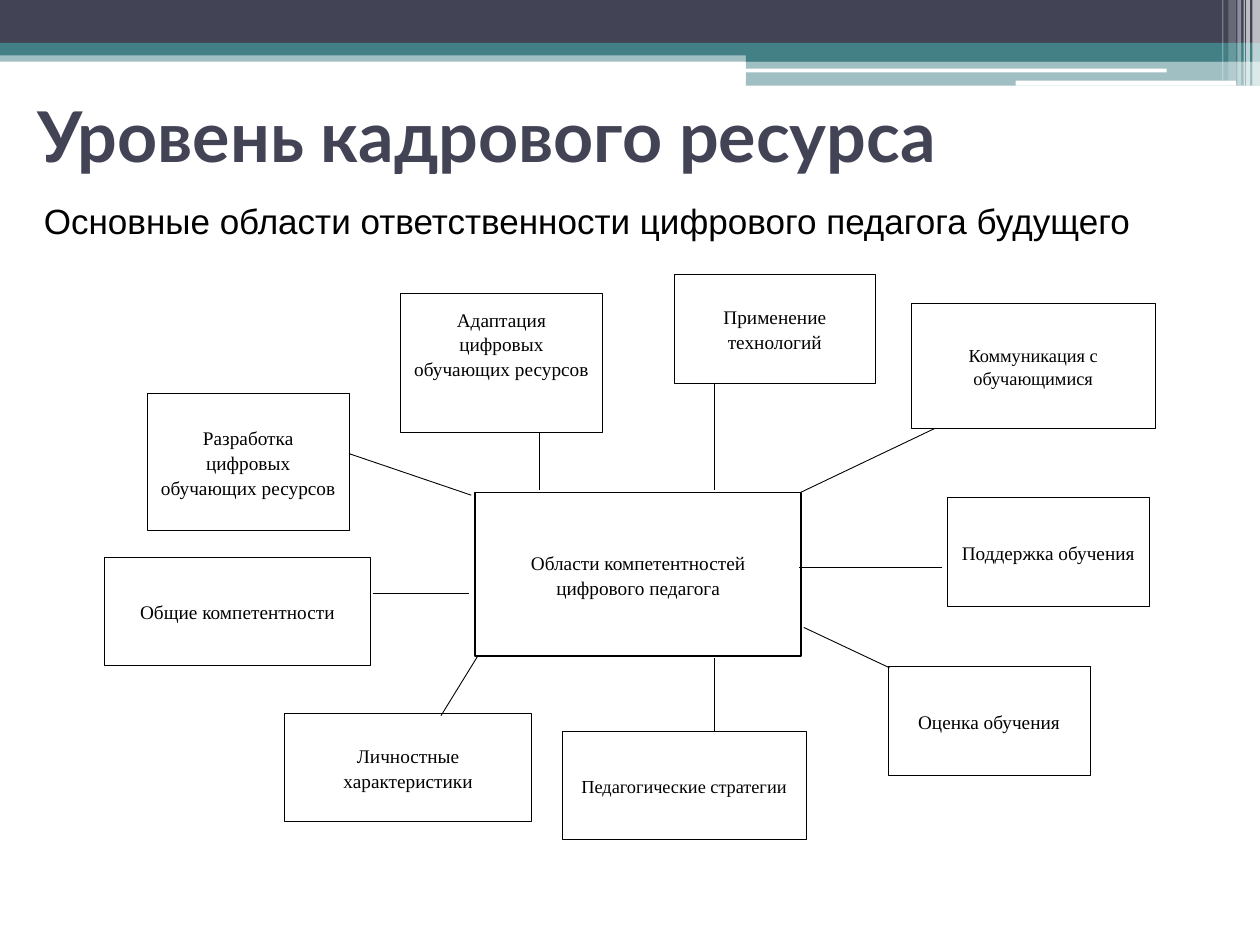
from dataclasses import dataclass

from lxml import etree
from pptx import Presentation
from pptx.dml.color import RGBColor
from pptx.enum.shapes import MSO_CONNECTOR, MSO_SHAPE
from pptx.enum.text import MSO_ANCHOR, MSO_AUTO_SIZE, PP_ALIGN
from pptx.oxml.ns import qn
from pptx.util import Inches, Pt

RECT, ROUNDED = MSO_SHAPE.RECTANGLE, MSO_SHAPE.ROUNDED_RECTANGLE
STRAIGHT = MSO_CONNECTOR.STRAIGHT
LEFT, CENTER = PP_ALIGN.LEFT, PP_ALIGN.CENTER
TOP, MIDDLE = MSO_ANCHOR.TOP, MSO_ANCHOR.MIDDLE
TITLE_ONLY = 5
COLUMNS, ROWS = 100, 75  # square cells on a 10 x 7.5 inch slide
SLIDE_WIDTH, SLIDE_HEIGHT = Inches(10), Inches(7.5)


@dataclass(frozen=True)
class Theme:
    dark: str = "424456"
    teal: str = "438086"
    white: str = "FFFFFF"
    ink: str = "000000"
    title_font: str = "Lato"
    body_font: str = "Arial"
    box_font: str = "Times New Roman"
    title_size: float = 40
    body_size: float = 20
    box_size: float = 11
    small_box_size: float = 10.5
    hub_line: float = 1
    box_line: float = 0.25
    link_line: float = 0.5


THEME = Theme()

# Header bands: shape, (column, row, columns, rows), colour, opacity in percent
HEADER_BANDS = [
    (RECT, (0, 4, 100, 0.9), THEME.teal, 50),
    (RECT, (0, 0, 100, 3.4), THEME.dark, 100),
    (RECT, (0, 3.4, 100, 1), THEME.teal, 100),
    (RECT, (59.2, 3.9, 40.8, 1), THEME.teal, 100),
    (RECT, (59.2, 4.85, 40.8, 1.95), THEME.teal, 50),
    (ROUNDED, (59.1, 5.45, 33.5, 0.3), THEME.white, 100),
    (ROUNDED, (80.6, 6.4, 17.5, 0.4), THEME.white, 100),
]

# White stripes at the right edge: column, width, height, opacity
HEADER_STRIPES = [
    (99.4, 0.6, 6.8, 65), (98.9, 0.3, 6.8, 65), (98.7, 0.1, 6.8, 60),
    (98.2, 0.3, 6.8, 40), (97.5, 0.6, 6.4, 20), (97, 0.1, 6.4, 30),
]

HUB = ("Области компетентностей цифрового педагога", (37.7, 39.1, 25.9, 13))

# Areas clockwise from the top left: text, place, type size, space kept below text
AREAS = [
    ("Адаптация цифровых обучающих ресурсов", (31.8, 23.3, 16, 11), THEME.box_size, 3.6),
    ("Применение технологий", (53.5, 21.8, 16, 8.6), THEME.box_size, 0.5),
    ("Коммуникация с обучающимися", (72.3, 24.1, 19.4, 9.9), THEME.small_box_size, 0.5),
    ("Поддержка обучения", (75.2, 39.5, 16, 8.6), THEME.box_size, 0.5),
    ("Оценка обучения", (70.5, 52.9, 16, 8.6), THEME.box_size, 0.5),
    ("Педагогические стратегии", (44.6, 58, 19.4, 8.6), THEME.small_box_size, 0.5),
    ("Личностные характеристики", (22.6, 56.6, 19.6, 8.6), THEME.box_size, 0.5),
    ("Общие компетентности", (8.3, 44.2, 21.1, 8.6), THEME.box_size, 0.5),
    ("Разработка цифровых обучающих ресурсов", (11.7, 31.2, 16, 10.9), THEME.box_size, 0.5),
]

# Links in the same order: area end, hub end
LINKS = [
    ((42.8, 34.3), (42.8, 38.9)),
    ((56.7, 30.4), (56.7, 38.9)),
    ((74.2, 34), (63.5, 39.1)),
    ((74.8, 45), (63.4, 45)),
    ((70.6, 53), (63.8, 49.8)),
    ((56.7, 58), (56.7, 52.2)),
    ((35, 56.8), (37.9, 52.1)),
    ((29.6, 47.1), (37.2, 47.1)),
    ((27.7, 36), (37.4, 39.3)),
]


def across(columns):
    return round(SLIDE_WIDTH * columns / COLUMNS)


def down(rows):
    return round(SLIDE_HEIGHT * rows / ROWS)


def place(cells):
    column, row, width, height = cells
    return across(column), down(row), across(width), down(height)


def write_text(frame, text, font, size, color, align, anchor, bold=False):
    frame.text = text
    frame.word_wrap = True
    frame.auto_size = MSO_AUTO_SIZE.NONE
    frame.vertical_anchor = anchor
    paragraph = frame.paragraphs[0]
    paragraph.alignment = align
    run_font = paragraph.runs[0].font
    run_font.name, run_font.size, run_font.bold = font, Pt(size), bold
    run_font.color.rgb = RGBColor.from_string(color)
    return paragraph


def add_band(slide, shape, cells, color, opacity):
    band = slide.shapes.add_shape(shape, *place(cells))
    band.shadow.inherit = False
    band.fill.solid()
    band.fill.fore_color.rgb = RGBColor.from_string(color)
    band.line.fill.background()
    if opacity < 100:
        fill_color = band.fill._xPr.find(qn("a:solidFill"))[0]
        etree.SubElement(fill_color, qn("a:alpha"), val=str(opacity * 1000))


def add_header(slide):
    for shape, cells, color, opacity in HEADER_BANDS:
        add_band(slide, shape, cells, color, opacity)
    for column, width, height, opacity in HEADER_STRIPES:
        add_band(slide, RECT, (column, 0, width, height), THEME.white, opacity)


def add_headings(slide):
    title = slide.shapes.title
    title.left, title.top, title.width, title.height = place((2, 6, 95.8, 9.4))
    write_text(title.text_frame, "Уровень кадрового ресурса", THEME.title_font,
               THEME.title_size, THEME.dark, LEFT, MIDDLE, bold=True)
    subtitle = slide.shapes.add_textbox(*place((2.5, 14.7, 91.6, 6)))
    paragraph = write_text(
        subtitle.text_frame,
        "Основные области ответственности цифрового педагога будущего",
        THEME.body_font, THEME.body_size, THEME.ink, LEFT, TOP)
    paragraph.line_spacing, paragraph.space_before = 1.2, Pt(3)


def add_box(slide, text, cells, size, line_width, space_below=0.5):
    box = slide.shapes.add_shape(RECT, *place(cells))
    box.shadow.inherit = False
    box.fill.solid()
    box.fill.fore_color.rgb = RGBColor.from_string(THEME.white)
    box.line.color.rgb = RGBColor.from_string(THEME.ink)
    box.line.width = Pt(line_width)
    box.text_frame.margin_bottom = down(space_below)
    paragraph = write_text(box.text_frame, text, THEME.box_font, size,
                           THEME.ink, CENTER, MIDDLE)
    paragraph.line_spacing, paragraph.space_after = 1.07, Pt(8)


def add_link(slide, start, end):
    link = slide.shapes.add_connector(
        STRAIGHT, across(start[0]), down(start[1]), across(end[0]), down(end[1]))
    link.line.color.rgb = RGBColor.from_string(THEME.ink)
    link.line.width = Pt(THEME.link_line)
    etree.SubElement(link._element.spPr, qn("a:effectLst"))


def main():
    deck = Presentation()
    deck.slide_width, deck.slide_height = SLIDE_WIDTH, SLIDE_HEIGHT
    slide = deck.slides.add_slide(deck.slide_layouts[TITLE_ONLY])
    add_header(slide)
    add_headings(slide)

    # Competence map
    add_box(slide, *HUB, THEME.box_size, THEME.hub_line)
    for text, cells, size, space_below in AREAS:
        add_box(slide, text, cells, size, THEME.box_line, space_below)
    for area_end, hub_end in LINKS:
        add_link(slide, area_end, hub_end)

    deck.save("out.pptx")


if __name__ == "__main__":
    main()
